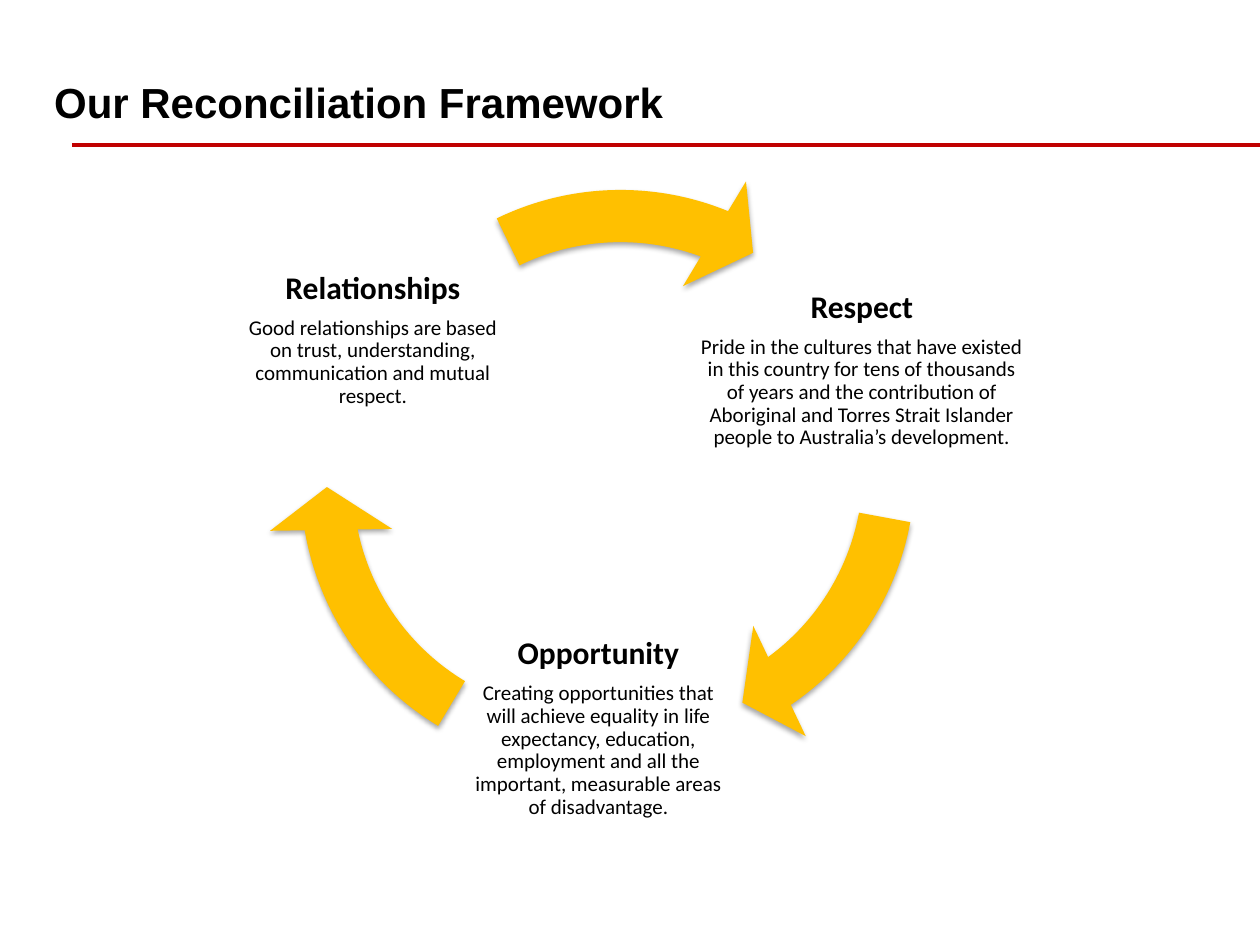
"""Build the reconciliation framework slide with its cycle of three themes."""
from lxml import etree
from pptx import Presentation
from pptx.dml.color import RGBColor
from pptx.enum import shapes, text
from pptx.oxml import ns
from pptx.util import Inches, Pt

BLACK = RGBColor(0, 0, 0)
RED = RGBColor(0xC0, 0, 0)
GOLD = RGBColor(0xFF, 0xC0, 0)

TITLE = "Our Reconciliation Framework"
SIDE = 5.05
THEMES = [
    {"head": "Respect",
     "body": "Pride in the cultures that have existed in this country for tens of "
             "thousands of years and the contribution of Aboriginal and Torres Strait "
             "Islander people to Australia’s development.",
     "box": (5.51, 1.98, 2.66, 2.14), "pad": 0.03, "drop": 0.33,
     "arrow": (2.49, 1.21), "turn": (32.97, 6.3)},
    {"head": "Opportunity",
     "body": "Creating opportunities that will achieve equality in life expectancy, "
             "education, employment and all the important, measurable areas of "
             "disadvantage.",
     "box": (3.68, 4.84, 2.14, 2.14), "pad": 0.03, "drop": 0.22,
     "arrow": (2.11, 1.31), "turn": (101.72, 72.6)},
    {"head": "Relationships",
     "body": "Good relationships are based on trust, understanding, communication "
             "and mutual respect.",
     "box": (1.89, 1.73, 2.14, 2.14), "pad": 0.01, "drop": 0.43,
     "arrow": (2.4, 1.23), "turn": (174.86, 146.45)},
]


def add_run(para, words, font, size, bold):
    run = para.add_run()
    run.text = words
    run.font.name = font
    run.font.size = Pt(size)
    run.font.bold = bold
    run.font.color.rgb = BLACK


def add_box(slide, box, pads, anchor):
    frame = slide.shapes.add_textbox(*map(Inches, box)).text_frame
    frame.word_wrap = True
    frame.vertical_anchor = anchor
    (frame.margin_left, frame.margin_top,
     frame.margin_right, frame.margin_bottom) = map(Inches, pads)
    return frame


def add_effects(shape):
    props = shape._element.spPr
    return etree.SubElement(props, ns.qn("a:effectLst"))


def add_theme(slide, theme):
    pad = theme["pad"]
    frame = add_box(slide, theme["box"], (pad, theme["drop"], pad, pad),
                    text.MSO_ANCHOR.TOP)
    rows = [(theme["head"], 18, True), (theme["body"], 12, False)]
    for i, (words, size, bold) in enumerate(rows):
        para = frame.add_paragraph() if i else frame.paragraphs[0]
        para.alignment = text.PP_ALIGN.CENTER
        para.line_spacing = 0.9
        para.space_after = Pt(size * 0.35)
        add_run(para, words, "Calibri", size, bold)


def add_arrow(slide, theme):
    left, top = theme["arrow"]
    arrow = slide.shapes.add_shape(shapes.MSO_SHAPE.CIRCULAR_ARROW, Inches(left),
                                   Inches(top), Inches(SIDE), Inches(SIDE))
    for i, value in enumerate((0.082, 5.762, *theme["turn"], 0.096)):
        arrow.adjustments[i] = value
    arrow.fill.solid()
    arrow.fill.fore_color.rgb = GOLD
    arrow.line.fill.background()
    shade = etree.SubElement(add_effects(arrow), ns.qn("a:outerShdw"),
                             blurRad=str(Pt(3.1)), dist=str(Pt(1.8)),
                             dir="5400000", rotWithShape="0")
    tint = etree.SubElement(shade, ns.qn("a:srgbClr"), val=str(BLACK))
    etree.SubElement(tint, ns.qn("a:alpha"), val="35000")


def main():
    deck = Presentation()
    deck.slide_width, deck.slide_height = Inches(10), Inches(7.5)
    slide = deck.slides.add_slide(deck.slide_layouts[6])

    frame = add_box(slide, (0.43, 0.2, 9.37, 0.87), (0, 0, 0.1, 0.06),
                    text.MSO_ANCHOR.BOTTOM)
    add_run(frame.paragraphs[0], TITLE, "Arial", 24, True)

    rule = slide.shapes.add_connector(shapes.MSO_CONNECTOR.STRAIGHT, Inches(0.57),
                                      Inches(1.15), Inches(10), Inches(1.15))
    rule.line.color.rgb = RED
    rule.line.width = Pt(2.25)
    add_effects(rule)

    for theme in THEMES:
        add_theme(slide, theme)
        add_arrow(slide, theme)
    deck.save("out.pptx")


if __name__ == "__main__":
    main()
